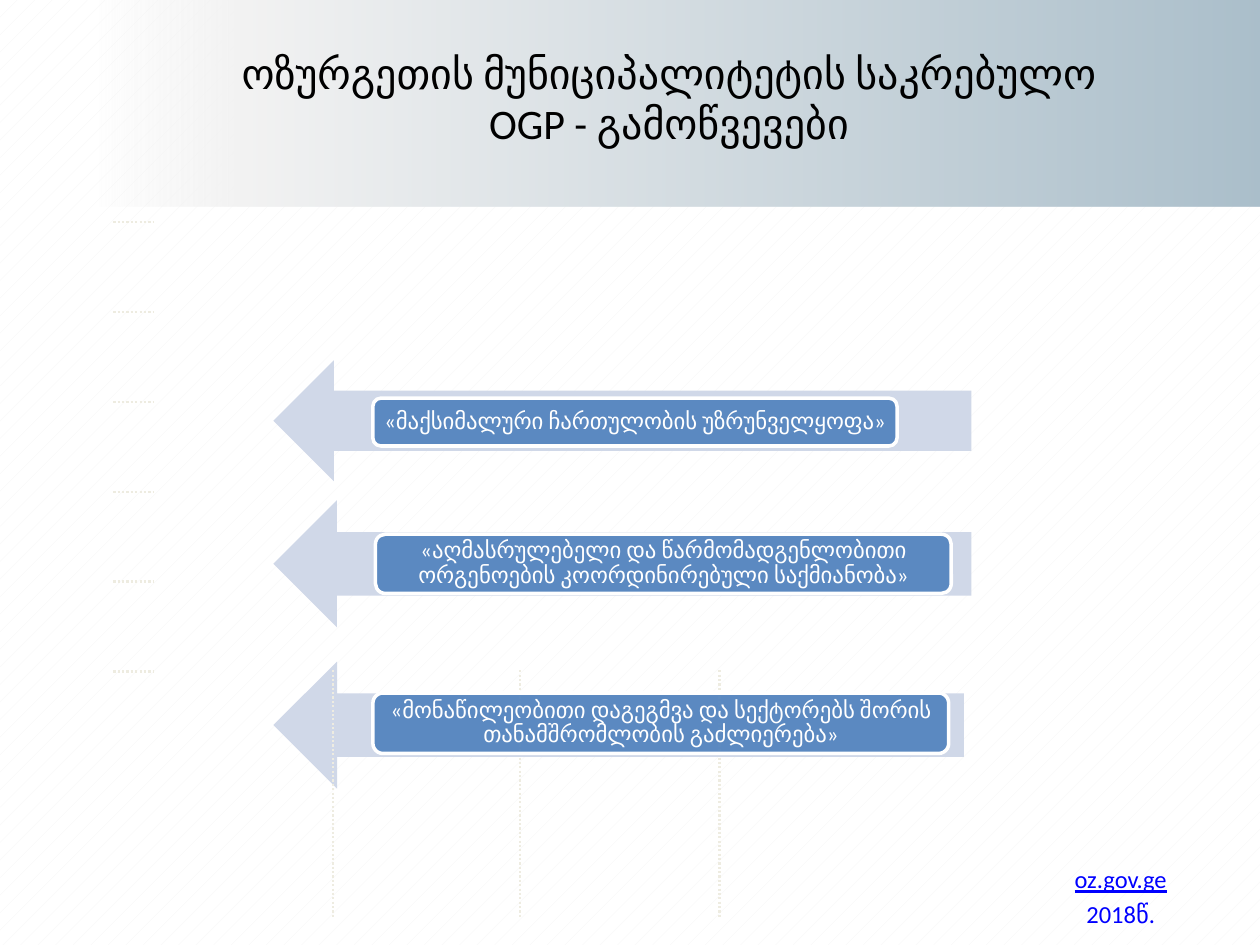
"""Build the slide on the challenges met by the municipal council."""
import dataclasses

import lxml.etree
import pptx
import pptx.dml.color
import pptx.enum.dml
import pptx.enum.shapes
import pptx.enum.text
import pptx.oxml
import pptx.oxml.ns
import pptx.util

Inches = pptx.util.Inches
Kind = pptx.enum.shapes.MSO_SHAPE
HUES = {"ink": "000000", "link": "0000FF", "white": "FFFFFF", "dots": "EEECE1",
        "arrow": "D0D8E8", "box": "4F81BD", "weave": "F5F5F5",
        "pale": "F2F2F2", "steel": "AABECA"}


@dataclasses.dataclass
class Goal:
    """An arrow with a labelled box on it, in inches."""
    text: str
    arrow: tuple
    box: tuple


GOALS = [
    Goal("«მაქსიმალური ჩართულობის უზრუნველყოფა»",
         (2.17, 2.86, 5.54, 0.96), (2.96, 3.16, 4.16, 0.38)),
    Goal("«აღმასრულებელი და წარმომადგენლობითი ორგენოების კოორდინირებული საქმიანობა»",
         (2.17, 3.97, 5.54, 1.01), (2.98, 4.24, 4.57, 0.47)),
    Goal("«მონაწილეობითი დაგეგმვა და სექტორებს შორის თანამშრომლობის გაძლიერება»",
         (2.17, 5.25, 5.48, 1.01), (2.96, 5.5, 4.57, 0.48)),
]


def hue(name: str) -> pptx.dml.color.RGBColor:
    """Look up a colour by name."""
    return pptx.dml.color.RGBColor.from_string(HUES[name])


def write(para, text: str, *, size: float, tint: str, under: bool = False,
          lead: float = None, gap: float = None) -> None:
    """Fill a paragraph with centred text, one line per row of text."""
    para.alignment = pptx.enum.text.PP_ALIGN.CENTER
    para.line_spacing = lead
    if gap is not None:
        para.space_before = pptx.util.Pt(gap)
    for num, row in enumerate(text.splitlines()):
        if num:
            para.add_line_break()
        run = para.add_run()
        run.text = row
        run.font.name = "Calibri"
        run.font.size = pptx.util.Pt(size)
        run.font.color.rgb = hue(tint)
        run.font.underline = under or None


def add_form(slide, kind, area: tuple, tint: str):
    """Add a flat preset shape without an outline."""
    form = slide.shapes.add_shape(kind, *map(Inches, area))
    form.shadow.inherit = False
    form.fill.solid()
    form.fill.fore_color.rgb = hue(tint)
    form.line.fill.background()
    return form


def add_band(slide) -> None:
    """Add the fading band behind the title."""
    band = add_form(slide, Kind.RECTANGLE, (0.75, 0, 9.25, 1.64), "pale")
    stops = "".join(
        f'<a:gs pos="{pos}"><a:srgbClr val="{HUES[name]}">{more}</a:srgbClr></a:gs>'
        for pos, name, more in ((0, "pale", '<a:alpha val="0"/>'),
                                (13000, "pale", ""), (100000, "steel", "")))
    fade = pptx.oxml.parse_xml(
        f'<a:gradFill {pptx.oxml.ns.nsdecls("a")} rotWithShape="1">'
        f'<a:gsLst>{stops}</a:gsLst><a:lin ang="0" scaled="0"/></a:gradFill>')
    props = band._element.spPr
    props.replace(props.find(pptx.oxml.ns.qn("a:solidFill")), fade)
    slide.shapes._spTree.insert(2, band._element)


def add_dots(slide, left: float, top: float, right: float, base: float) -> None:
    """Add a dotted guide line."""
    line = slide.shapes.add_connector(
        pptx.enum.shapes.MSO_CONNECTOR.STRAIGHT,
        *map(Inches, (left, top, right, base)))
    line.line.color.rgb = hue("dots")
    line.line.width = pptx.util.Pt(1.25)
    line.line.dash_style = pptx.enum.dml.MSO_LINE.ROUND_DOT
    lxml.etree.SubElement(line._element.spPr, pptx.oxml.ns.qn("a:effectLst"))


def add_arrow(slide, goal: Goal) -> None:
    """Add the arrow of a goal, pointing left."""
    arrow = add_form(slide, Kind.RIGHT_ARROW, goal.arrow, "arrow")
    arrow._element.spPr.find(pptx.oxml.ns.qn("a:xfrm")).set("flipH", "1")


def add_box(slide, goal: Goal) -> None:
    """Add the labelled box of a goal."""
    box = add_form(slide, Kind.ROUNDED_RECTANGLE, goal.box, "box")
    tone = box._element.spPr.find(pptx.oxml.ns.qn("a:solidFill"))[0]
    lxml.etree.SubElement(tone, pptx.oxml.ns.qn("a:alpha"), val="90000")
    box.line.color.rgb = hue("white")
    box.line.width = pptx.util.Pt(2)
    frame = box.text_frame
    frame.word_wrap = True
    frame.vertical_anchor = pptx.enum.text.MSO_ANCHOR.MIDDLE
    for side in ("left", "top", "right", "bottom"):
        setattr(frame, f"margin_{side}", Inches(0.05))
    write(frame.paragraphs[0], goal.text, size=13, tint="white", lead=0.9)


def main() -> None:
    """Draw the slide and save it."""
    deck = pptx.Presentation()
    deck.slide_width, deck.slide_height = Inches(10), Inches(7.5)
    slide = deck.slides.add_slide(deck.slide_layouts.get_by_name("Title Only"))
    back = slide.background.fill
    back.patterned()
    back.pattern = pptx.enum.dml.MSO_PATTERN.PERCENT_5
    back.fore_color.rgb = hue("weave")
    back.back_color.rgb = hue("white")
    add_band(slide)

    title = slide.shapes.title
    title.left, title.top, title.width, title.height = map(
        Inches, (0.81, 0.15, 9, 1.25))
    title.text_frame.vertical_anchor = pptx.enum.text.MSO_ANCHOR.MIDDLE
    write(title.text_frame.paragraphs[0], """ოზურგეთის მუნიციპალიტეტის საკრებულო
OGP - გამოწვევები""", size=24, tint="ink")

    for step in range(6):
        top = 1.76 + 0.714 * step
        add_dots(slide, 0.9, top, 1.22, top)
    for goal in GOALS:
        add_arrow(slide, goal)
    for left in (2.64, 4.13, 5.71):
        add_dots(slide, left, 5.32, left, 7.29)
    for goal in GOALS:
        add_box(slide, goal)

    foot = slide.shapes.add_textbox(*map(Inches, (7.81, 6.81, 2.17, 0.58))).text_frame
    foot.word_wrap = True
    write(foot.paragraphs[0], "oz.gov.ge", size=14, tint="link", under=True)
    write(foot.add_paragraph(), "2018წ.", size=14, tint="link", gap=2.8)
    deck.save("out.pptx")


if __name__ == "__main__":
    main()
